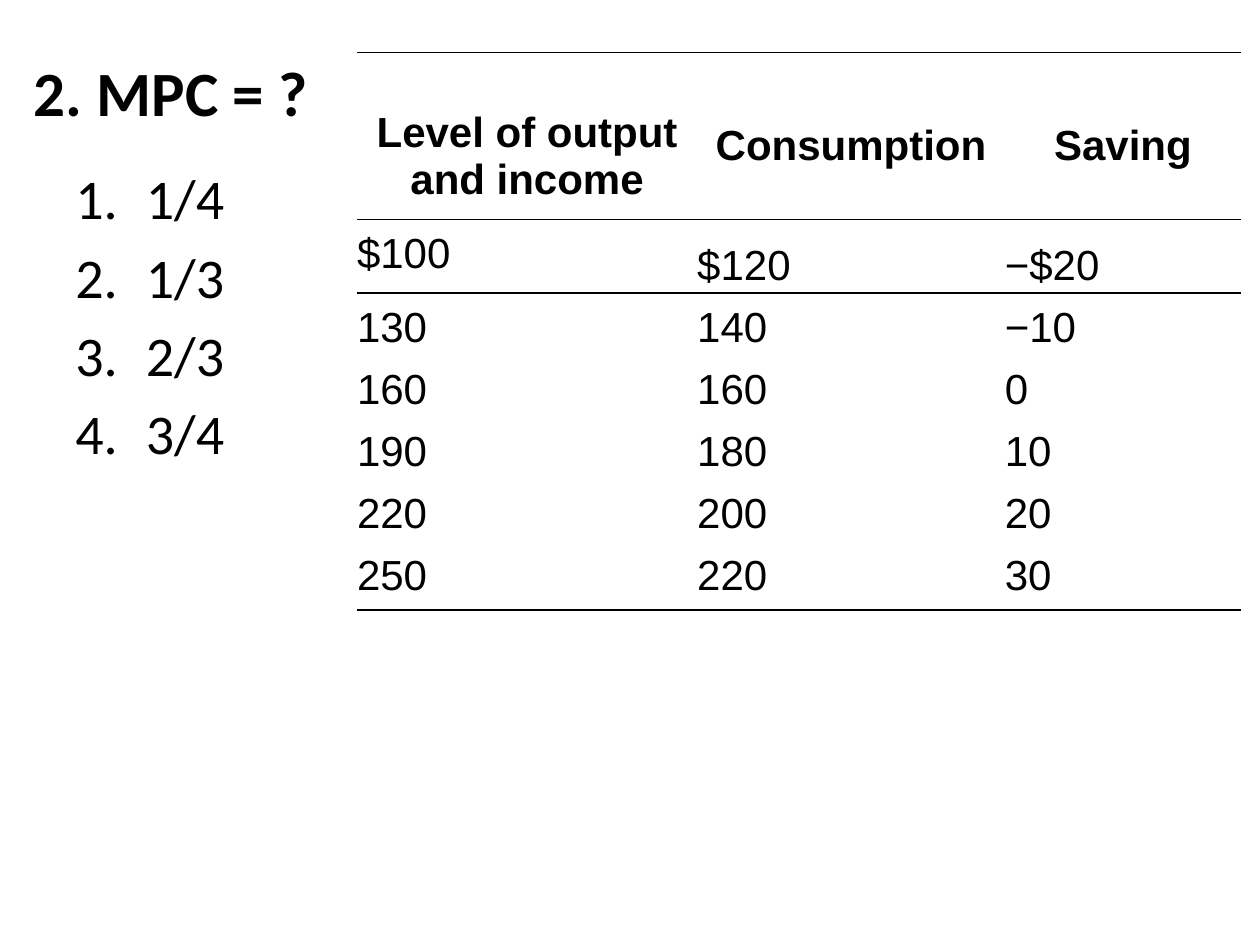
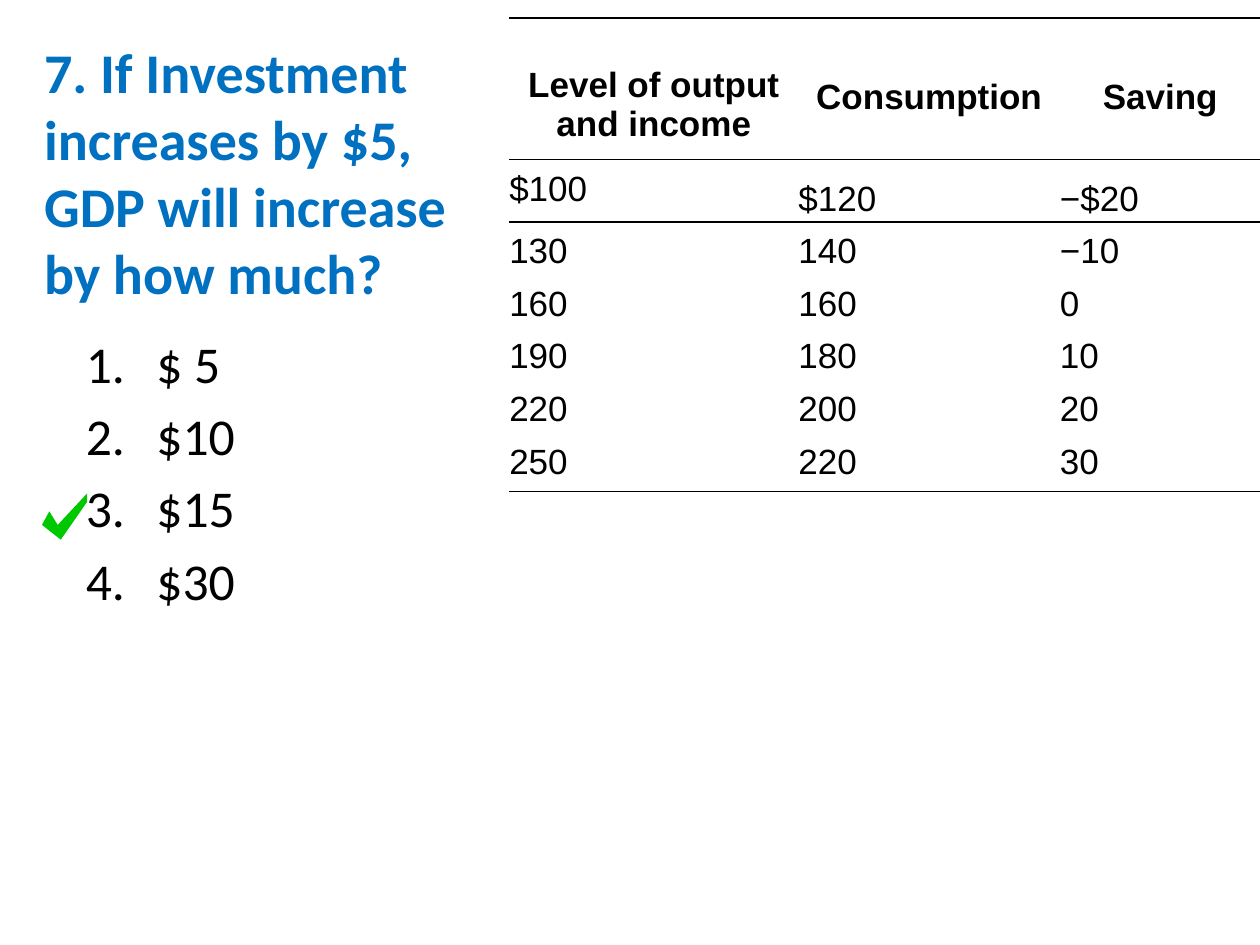
from lxml.etree import SubElement
from pptx import Presentation
from pptx.dml.color import RGBColor
from pptx.enum.text import MSO_ANCHOR as Anchor, MSO_AUTO_SIZE as AutoSize, PP_ALIGN as Align
from pptx.oxml.ns import qn
from pptx.util import Inches, Pt

BLACK = RGBColor(0, 0, 0)
BLUE = RGBColor(0x00, 0x70, 0xC0)
GREEN = RGBColor(0x00, 0xC8, 0x00)
HEAD_FONT, TABLE_FONT = "Calibri", "Arial"

COLS, ROWS = 120, 90  # grid over the whole slide
NO_STYLE = "{2D5ABB26-0587-4C30-8999-92F81FD0307C}"

HEADER = ["Level of output and income", "Consumption", "Saving"]
INCOME = [
    ("$100", "$120", "−$20"),
    ("130", "140", "−10"),
    ("160", "160", "0"),
    ("190", "180", "10"),
    ("220", "200", "20"),
    ("250", "220", "30"),
]
COL_WIDTHS = [32.4, 29.3, 22.5]
ROW_HEIGHTS = [15.9, 7, 5.9, 5.9, 5.9, 5.9, 6.6]
# check mark outline, in tenths of a grid cell
CHECK = [(47, 487), (40, 500), (58, 514), (83, 478), (83, 470), (55, 500)]


def write(p, text, size, font=HEAD_FONT, color=BLACK, bold=False, align=Align.LEFT):
    p.alignment = align
    r = p.add_run()
    r.text = text
    r.font.name, r.font.size, r.font.bold = font, Pt(size), bold
    r.font.color.rgb = color


def add_border(cell, side):
    ln = SubElement(cell._tc.get_or_add_tcPr(), qn(f"a:ln{side}"), w=str(Pt(1)))
    fill = SubElement(ln, qn("a:solidFill"))
    SubElement(fill, qn("a:srgbClr"), val=str(BLACK))


class Quiz:
    def __init__(self):
        self.prs = Presentation()
        self.prs.slide_width, self.prs.slide_height = Inches(10), Inches(7.5)
        self.s = None

    def x(self, cols):
        return round(self.prs.slide_width * cols / COLS)

    def y(self, rows):
        return round(self.prs.slide_height * rows / ROWS)

    def box(self, left, top, width, height):
        return self.x(left), self.y(top), self.x(width), self.y(height)

    def new_slide(self):
        self.s = self.prs.slides.add_slide(self.prs.slide_layouts[5])

    def title(self, text, box, size, color=BLACK):
        sp = self.s.shapes.title
        sp.left, sp.top, sp.width, sp.height = self.box(*box)
        tf = sp.text_frame
        tf.word_wrap, tf.auto_size = True, AutoSize.NONE
        tf.vertical_anchor = Anchor.MIDDLE
        write(tf.paragraphs[0], text, size, color=color, bold=True)

    def choices(self, answers, box, size):
        """Add the automatically numbered list of answers."""
        tf = self.s.shapes.add_textbox(*self.box(*box)).text_frame
        tf.word_wrap = True
        indent = Inches(0.56)
        for i, answer in enumerate(answers):
            p = tf.add_paragraph() if i else tf.paragraphs[0]
            write(p, answer, size)
            p.space_before = Pt(0.2 * size)
            pPr = p._p.get_or_add_pPr()
            pPr.set("marL", str(indent))
            pPr.set("indent", str(-indent))
            SubElement(pPr, qn("a:buFont"), typeface=HEAD_FONT)
            SubElement(pPr, qn("a:buAutoNum"), type="arabicPeriod")

    def income_table(self, left, top, size, scale=1.0):
        """Add the income table, with every length multiplied by scale."""
        rows = [HEADER, *INCOME]
        last = len(rows) - 1
        box = self.box(left, top, sum(COL_WIDTHS) * scale, sum(ROW_HEIGHTS) * scale)
        table = self.s.shapes.add_table(len(rows), len(HEADER), *box).table
        table.first_row = table.horz_banding = False
        table._tbl.tblPr.find(qn("a:tableStyleId")).text = NO_STYLE
        for col, width in zip(table.columns, COL_WIDTHS):
            col.width = self.x(width * scale)
        for row, height in zip(table.rows, ROW_HEIGHTS):
            row.height = self.y(height * scale)

        for i, values in enumerate(rows):
            for j, value in enumerate(values):
                cell = table.cell(i, j)
                top_gap, bottom_gap = 1.1, 0
                if i == 0:
                    top_gap, bottom_gap = (6.7 if j else 5.4), 0.3
                elif i == 1 and j:
                    top_gap = 2.2
                elif i == last:
                    bottom_gap = 0.7
                cell.margin_left = cell.margin_right = 0
                cell.margin_top = self.y(top_gap * scale)
                cell.margin_bottom = self.y(bottom_gap * scale)
                if i < 2:
                    add_border(cell, "T")
                if i in (0, last):
                    add_border(cell, "B")
                cell.fill.background()
                write(cell.text_frame.paragraphs[0], value, size, TABLE_FONT,
                      bold=i == 0, align=Align.LEFT if i else Align.CENTER)

    def check_mark(self):
        builder = self.s.shapes.build_freeform(*CHECK[0], scale=self.x(1) / 10)
        builder.add_line_segments(CHECK[1:], close=True)
        sp = builder.convert_to_shape()
        sp.shadow.inherit = False
        sp.fill.solid()
        sp.fill.fore_color.rgb = GREEN
        sp.line.fill.background()


def main():
    quiz = Quiz()

    quiz.new_slide()
    quiz.title("2. MPC = ?", (2, 3, 32, 11.4), 36)
    quiz.income_table(34, 5, 24)
    quiz.choices(["1/4", "1/3", "2/3", "3/4"], (6, 15, 17, 29), 32)

    quiz.new_slide()
    quiz.title("7. If Investment increases by $5, GDP will increase by how much?",
               (3, 3.6, 43, 25.5), 32, BLUE)
    quiz.income_table(48.5, 1.7, 20, scale=0.85)
    quiz.choices(["$ 5", "$10", "$15", "$30"], (7, 31, 17, 29), 29.5)
    quiz.check_mark()

    quiz.prs.save("out.pptx")


if __name__ == "__main__":
    main()
